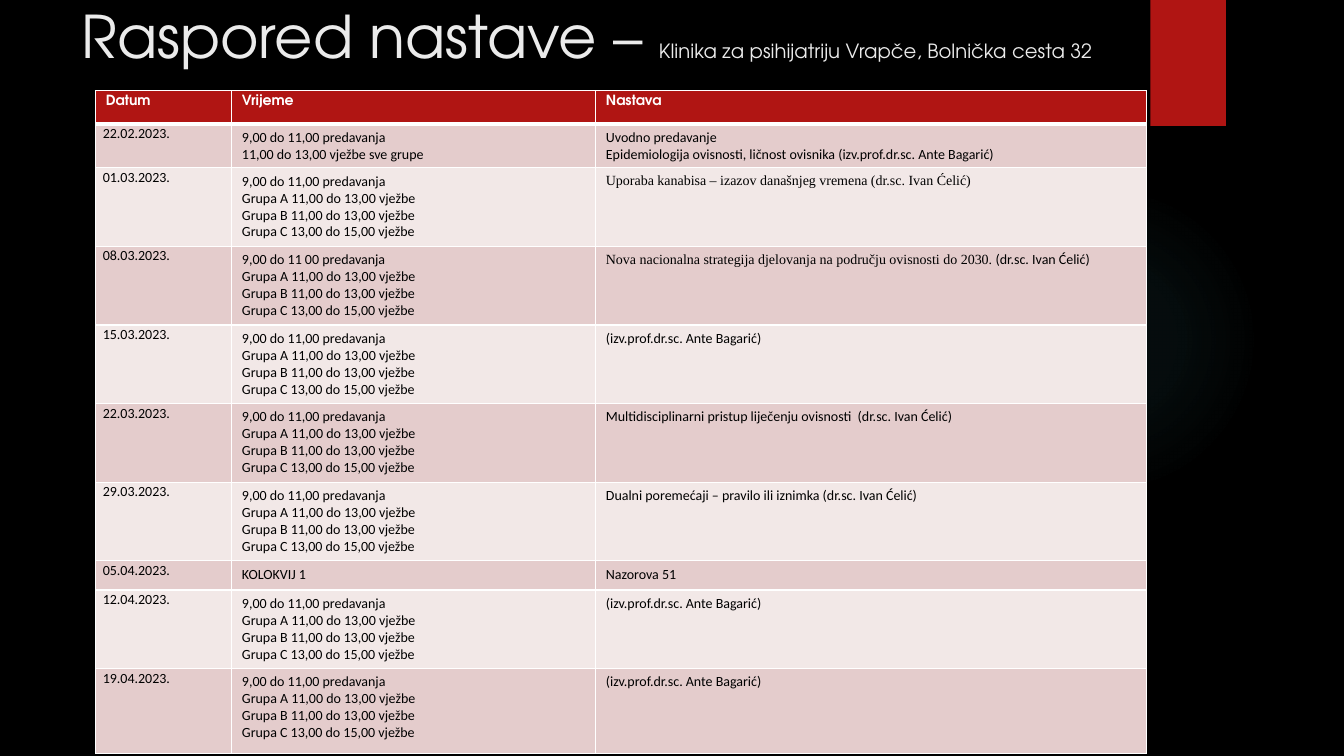
from lxml import etree
from pptx import Presentation
from pptx.dml.color import RGBColor
from pptx.enum.shapes import MSO_SHAPE
from pptx.enum.text import MSO_ANCHOR
from pptx.oxml import parse_xml
from pptx.util import Inches, Pt

RECT, OVAL = MSO_SHAPE.RECTANGLE, MSO_SHAPE.OVAL
TOP = MSO_ANCHOR.TOP
BLACK = RGBColor(0x00, 0x00, 0x00)
WHITE = RGBColor(0xFF, 0xFF, 0xFF)
PALE = RGBColor(0xEB, 0xEB, 0xEB)
RED = RGBColor(0xB0, 0x15, 0x13)
ROSE = RGBColor(0xE4, 0xCC, 0xCC)
BLUSH = RGBColor(0xF2, 0xE8, 0xE7)
TEAL = RGBColor(0x50, 0xB9, 0xC1)
HEAD, BODY, SERIF = "TeX Gyre Adventor", "Calibri", "Times New Roman"
NS = "http://schemas.openxmlformats.org/drawingml/2006/main"


def add(parent, tag, **attrs):
    node = etree.SubElement(parent, f"{{{NS}}}{tag}")
    for key, val in attrs.items():
        node.set(key, str(val))
    return node


def tint(parent, color, alpha=100):
    node = add(parent, "srgbClr", val=color)
    if alpha < 100:
        add(node, "alpha", val=alpha * 1000)


class Deck:
    def __init__(self):
        self.prs = Presentation()
        self.prs.slide_width = Inches(13.33)
        self.prs.slide_height = Inches(7.5)
        self.slide = self.prs.slides.add_slide(self.prs.slide_layouts[6])
        fill = self.slide.background.fill
        fill.solid()
        fill.fore_color.rgb = BLACK

    def shape(self, kind, box, color):
        item = self.slide.shapes.add_shape(kind, *map(Inches, box))
        item.shadow.inherit = False
        item.line.fill.background()
        item.fill.solid()
        item.fill.fore_color.rgb = color
        return item

    def glow(self, box, color, stops):
        props = self.shape(OVAL, box, color)._element.spPr
        grad = parse_xml(f'<a:gradFill xmlns:a="{NS}"/>')
        stop_list = add(grad, "gsLst")
        for pos, alpha in stops:
            tint(add(stop_list, "gs", pos=pos * 1000), color, alpha)
        way = add(grad, "path", path="circle")
        add(way, "fillToRect", l=50000, t=50000, r=50000, b=50000)
        props.replace(props.find(f"{{{NS}}}solidFill"), grad)

    def tab(self, box, color):
        props = self.shape(RECT, box, color)._element.spPr
        shade = add(props.find(f"{{{NS}}}effectLst"), "outerShdw",
                    blurRad=Pt(3), dist=Pt(2), dir=5400000, rotWithShape=0)
        tint(shade, BLACK, 45)

    def run(self, para, text, size, font, color, bold=False):
        run = para.add_run()
        run.text = text
        run.font.size = Pt(size)
        run.font.name = font
        run.font.color.rgb = color
        run.font.bold = bold

    def title(self, box, runs):
        frame = self.slide.shapes.add_textbox(*map(Inches, box)).text_frame
        frame.word_wrap = True
        frame.vertical_anchor = TOP
        frame.margin_top = frame.margin_bottom = 0
        for text, size in runs:
            self.run(frame.paragraphs[0], text, size, HEAD, PALE)

    def edges(self, cell, row):
        props = cell._tc.get_or_add_tcPr()
        for side in "LRTB":
            thick = (row, side) in ((0, "B"), (1, "T"))
            line = add(props, f"ln{side}", w=Pt(3 if thick else 1))
            tint(add(line, "solidFill"), WHITE)

    def cell(self, cell, row, col, lines):
        self.edges(cell, row)
        cell.fill.solid()
        cell.fill.fore_color.rgb = RED if row == 0 else ROSE if row % 2 else BLUSH
        cell.vertical_anchor = TOP
        date = row > 0 and col == 0
        if date:
            cell.margin_left = cell.margin_right = Inches(0.07)
            cell.margin_top = cell.margin_bottom = 0
        frame = cell.text_frame
        for num, line in enumerate(lines):
            para = frame.add_paragraph() if num else frame.paragraphs[0]
            if date:
                para.line_spacing = 1.07
            for text, font in line:
                self.run(para, text, 10, font, BLACK if row else WHITE, row == 0)

    def table(self, box, cols, heights, rows):
        frame = self.slide.shapes.add_table(len(rows), len(cols), *map(Inches, box))
        grid = frame.table
        for col, width in zip(grid.columns, cols):
            col.width = Inches(width)
        for row, height in zip(grid.rows, heights):
            row.height = Inches(height)
        for r, row in enumerate(rows):
            for c, lines in enumerate(row):
                self.cell(grid.cell(r, c), r, c, lines)


def plain(*lines, font=BODY):
    return [[(line, font)] for line in lines]


def times(first="9,00 do 11,00 predavanja"):
    hours = (("A", "11,00 do 13,00"), ("B", "11,00 do 13,00"), ("C", "13,00 do 15,00"))
    return plain(first, *(f"Grupa {name} {span} vježbe" for name, span in hours))


BAGA = "(izv.prof.dr.sc. Ante Bagarić)"
CELIC = "(dr.sc. Ivan Ćelić)"
PLAN = [
    ("22.02.2023.", plain("9,00 do 11,00 predavanja", "11,00 do 13,00 vježbe sve grupe"),
     plain("Uvodno predavanje", f"Epidemiologija ovisnosti, ličnost ovisnika {BAGA}")),
    ("01.03.2023.", times(),
     plain(f"Uporaba kanabisa – izazov današnjeg vremena {CELIC}", font=SERIF)),
    ("08.03.2023.", times("9,00 do 11 00 predavanja"),
     [[("Nova nacionalna strategija djelovanja na području ovisnosti do 2030. ", SERIF),
       (CELIC, BODY)]]),
    ("15.03.2023.", times(), plain(BAGA)),
    ("22.03.2023.", times(),
     plain(f"Multidisciplinarni pristup liječenju ovisnosti  {CELIC}")),
    ("29.03.2023.", times(), plain(f"Dualni poremećaji – pravilo ili iznimka {CELIC}")),
    ("05.04.2023.", plain("KOLOKVIJ 1"), plain("Nazorova 51")),
    ("12.04.2023.", times(), plain(BAGA)),
    ("19.04.2023.", times(), plain(BAGA)),
]


def main():
    deck = Deck()
    deck.glow((9.41, 1.83, 3.08, 3.08), TEAL, ((0, 7), (36, 6), (69, 0), (100, 0)))
    deck.tab((11.41, 0, 0.75, 1.25), RED)
    deck.title((0.71, 0, 10.29, 0.9), (
        ("Raspored nastave – ", 42),
        ("Klinika za psihijatriju Vrapče, Bolnička cesta 32", 14)))
    rows = [[plain(name, font=HEAD) for name in ("Datum", "Vrijeme", "Nastava")]]
    rows += [[plain(date), hours, topic] for date, hours, topic in PLAN]
    heights = [0.33, 0.42] + [0.78] * 5 + [0.29, 0.78, 0.84]
    deck.table((0.95, 0.9, 10.42, 6.55), (1.35, 3.61, 5.46), heights, rows)
    deck.prs.save("out.pptx")


if __name__ == "__main__":
    main()
